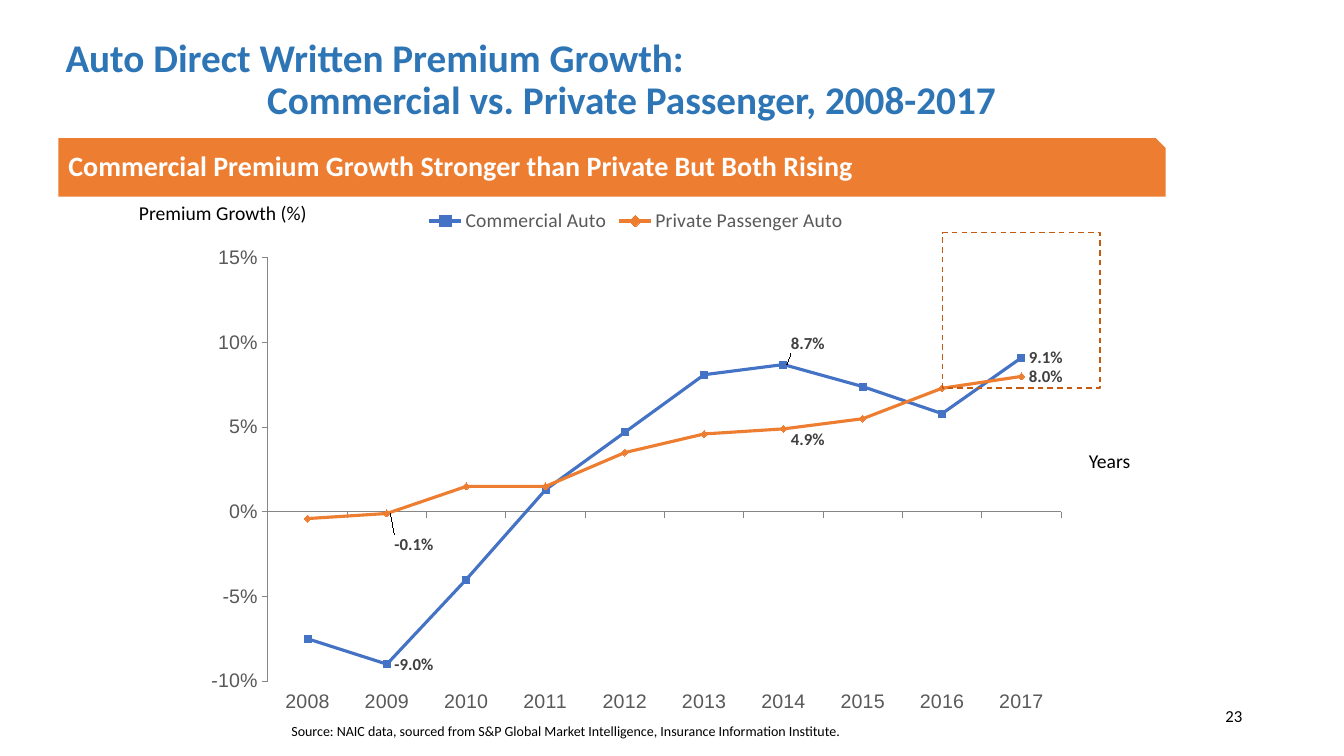
from lxml import etree
from pptx import Presentation
from pptx.chart.data import CategoryChartData
from pptx.dml.color import RGBColor
from pptx.enum.chart import XL_CHART_TYPE, XL_LABEL_POSITION, XL_LEGEND_POSITION
from pptx.enum.chart import XL_TICK_LABEL_POSITION, XL_TICK_MARK
from pptx.enum.dml import MSO_LINE
from pptx.enum.shapes import MSO_SHAPE
from pptx.enum.text import MSO_ANCHOR, MSO_AUTO_SIZE, PP_ALIGN
from pptx.oxml import parse_xml
from pptx.oxml.ns import nsdecls, qn
from pptx.util import Pt

LINE = XL_CHART_TYPE.LINE
RIGHT = XL_LABEL_POSITION.RIGHT
TOP_KEY = XL_LEGEND_POSITION.TOP
LOW = XL_TICK_LABEL_POSITION.LOW
OUT, NO_TICK = XL_TICK_MARK.OUTSIDE, XL_TICK_MARK.NONE
DASH = MSO_LINE.DASH
SNIP, RECT = MSO_SHAPE.SNIP_1_RECTANGLE, MSO_SHAPE.RECTANGLE
TOP, MID, LOW_END = MSO_ANCHOR.TOP, MSO_ANCHOR.MIDDLE, MSO_ANCHOR.BOTTOM
LEFT, FLUSH = PP_ALIGN.LEFT, PP_ALIGN.RIGHT
FIXED = MSO_AUTO_SIZE.NONE

BLACK = RGBColor(0, 0, 0)
WHITE = RGBColor(255, 255, 255)
NAVY = RGBColor(0x2E, 0x75, 0xB6)
BLUE = RGBColor(0x44, 0x72, 0xC4)
ORANGE = RGBColor(0xED, 0x7D, 0x31)
RUST = RGBColor(0xC5, 0x5A, 0x11)
GRAY = RGBColor(0x59, 0x59, 0x59)
DARK = RGBColor(0x40, 0x40, 0x40)
RULE = RGBColor(0x86, 0x86, 0x86)
PX = 9144

YEARS = [str(year) for year in range(2008, 2018)]
LINES = [
    ("Commercial Auto", BLUE,
     [-0.075, -0.09, -0.04, 0.013, 0.047, 0.081, 0.087, 0.074, 0.058, 0.091],
     {1: (0, 0), 6: (0, -0.04), 9: (0, 0)}),
    ("Private Passenger Auto", ORANGE,
     [-0.004, -0.001, 0.015, 0.015, 0.035, 0.046, 0.049, 0.055, 0.073, 0.08],
     {1: (0, 0.06), 6: (0, 0.02), 9: (0, 0)}),
]


def scale(*box):
    return [length * PX for length in box]


def place(shape, box):
    shape.left, shape.top, shape.width, shape.height = scale(*box)


def style(font, size, color, bold=False, face="Calibri"):
    font.name, font.size, font.bold = face, Pt(size), bold
    font.color.rgb = color


def write(shape, text, size=14, color=BLACK, bold=False, align=LEFT,
          anchor=MID, pads=(10, 5, 10, 5), lead=0.9, hang=0):
    frame = shape.text_frame
    frame.word_wrap, frame.auto_size = True, FIXED
    frame.vertical_anchor = anchor
    (frame.margin_left, frame.margin_top,
     frame.margin_right, frame.margin_bottom) = scale(*pads)
    para = frame.paragraphs[0]
    para.text = text
    para.alignment, para.line_spacing = align, lead
    para.space_before = Pt(0)
    props = para._p.get_or_add_pPr()
    props.set("marL", str(hang * PX))
    props.set("indent", str(-hang * PX))
    etree.SubElement(props, qn("a:buNone"))
    for run in para.runs:
        style(run.font, size, color, bold)


def label(slide, box, text, **look):
    write(slide.shapes.add_textbox(*scale(*box)), text, **look)


def layout(x, y, w=None, h=None, inner=False):
    parts = '<c:layoutTarget val="inner"/>' if inner else ""
    if w:
        parts += '<c:xMode val="edge"/><c:yMode val="edge"/>'
    for tag, size in zip("xywh", (x, y, w, h)):
        if size is not None:
            parts += f'<c:{tag} val="{size}"/>'
    return parse_xml(f'<c:layout {nsdecls("c")}><c:manualLayout>{parts}'
                     '</c:manualLayout></c:layout>')


def set_axis(axis):
    axis.has_major_gridlines = False
    axis.major_tick_mark, axis.minor_tick_mark = OUT, NO_TICK
    axis.format.line.color.rgb = RULE
    axis.format.line.width = Pt(0.75)
    style(axis.tick_labels.font, 14, GRAY, face="Arial")


def set_line(line, color, marks):
    line.smooth = False
    line.format.line.color.rgb = color
    line.format.line.width = Pt(2.25)
    line.marker.style = None
    line.data_labels.show_value = False
    for index, shift in marks.items():
        tag = line.points[index].data_label
        style(tag.font, 12, DARK, True)
        tag.position = RIGHT
        head = tag._dLbl.find(qn("c:idx"))
        head.addnext(parse_xml(f'<c:numFmt {nsdecls("c")} formatCode="0.0%" sourceLinked="0"/>'))
        if any(shift):
            head.addnext(layout(*shift))
    line.data_labels._element.append(parse_xml(
        f'<c:extLst {nsdecls("c")}><c:ext uri="{{CE6537A1-D6FC-4f65-9D91-7224C49458BB}}" '
        'xmlns:c15="http://schemas.microsoft.com/office/drawing/2012/chart">'
        '<c15:showLeaderLines val="1"/></c:ext></c:extLst>'))


def draw_chart(slide, box):
    data = CategoryChartData(number_format="0.0%")
    data.categories = YEARS
    for name, _, values, _ in LINES:
        data.add_series(name, values)
    chart = slide.shapes.add_chart(LINE, *scale(*box), data).chart
    style(chart.font, 10, BLACK)
    chart.has_title = False
    chart.has_legend = True
    key = chart.legend
    key.position, key.include_in_layout = TOP_KEY, False
    style(key.font, 14, GRAY)
    key._element.find(qn("c:legendPos")).addnext(layout(0.16, 0.02, 0.27, 0.11))
    area = chart._chartSpace.chart.plotArea
    for old in area.findall(qn("c:layout")):
        area.remove(old)
    area.insert(0, layout(0.084, 0.115, 0.896, 0.806, inner=True))
    years, rates = chart.category_axis, chart.value_axis
    set_axis(years)
    set_axis(rates)
    years.tick_label_position = LOW
    rates.minimum_scale, rates.maximum_scale = -0.1, 0.15
    rates.major_unit = 0.05
    rates.tick_labels.number_format = "0%"
    rates.tick_labels.number_format_is_linked = False
    chart.plots[0].vary_by_categories = False
    for line, (_, color, _, marks) in zip(chart.plots[0].series, LINES):
        set_line(line, color, marks)


def draw_plot(slide, box):
    x, y, w, h = box
    draw_chart(slide, box)
    label(slide, (x + w, y + 247, 172, 31), "Years")
    label(slide, (x - 64, y + 1, 201, 31), "Premium Growth (%)")
    frame = slide.shapes.add_shape(RECT, *scale(x + 743, y + 35, 156, 154))
    frame.shadow.inherit = False
    frame.fill.background()
    frame.line.color.rgb = RUST
    frame.line.width, frame.line.dash_style = Pt(1), DASH


def draw_head(slide, box):
    x, y, w, h = box
    title = slide.shapes.title
    place(title, (x, y, w, 104))
    write(title, "Auto Direct Written Premium Growth:\v"
          "Commercial vs. Private Passenger, 2008-2017",
          size=28, color=NAVY, bold=True, hang=200)
    band = slide.shapes.add_shape(SNIP, *scale(x + 3, y + 109, 1098, 58))
    band.shadow.inherit = False
    band.fill.solid()
    band.fill.fore_color.rgb = ORANGE
    band.line.fill.background()
    write(band, "Commercial Premium Growth Stronger than Private But Both Rising",
          size=20, color=WHITE, bold=True, pads=(10, 5, 10, 10))


def draw_foot(slide, box):
    x, y, w, h = box
    source = slide.placeholders[1]
    place(source, (x, y, 840, h))
    write(source, "Source: NAIC data, sourced from S&P Global Market Intelligence, "
          "Insurance Information Institute.", size=10, anchor=LOW_END, pads=(0, 0, 0, 0))
    label(slide, (x + w - 300, y + 6, 300, 40), "23", size=12,
          align=FLUSH, anchor=TOP, lead=1.0)


def main():
    deck = Presentation()
    deck.slide_width, deck.slide_height = scale(1333, 750)
    slide = deck.slides.add_slide(deck.slide_layouts[1])
    draw_plot(slide, (192, 196, 878, 521))
    draw_head(slide, (55, 28, 1206, 167))
    draw_foot(slide, (289, 689, 953, 45))
    deck.save("out.pptx")


if __name__ == "__main__":
    main()
